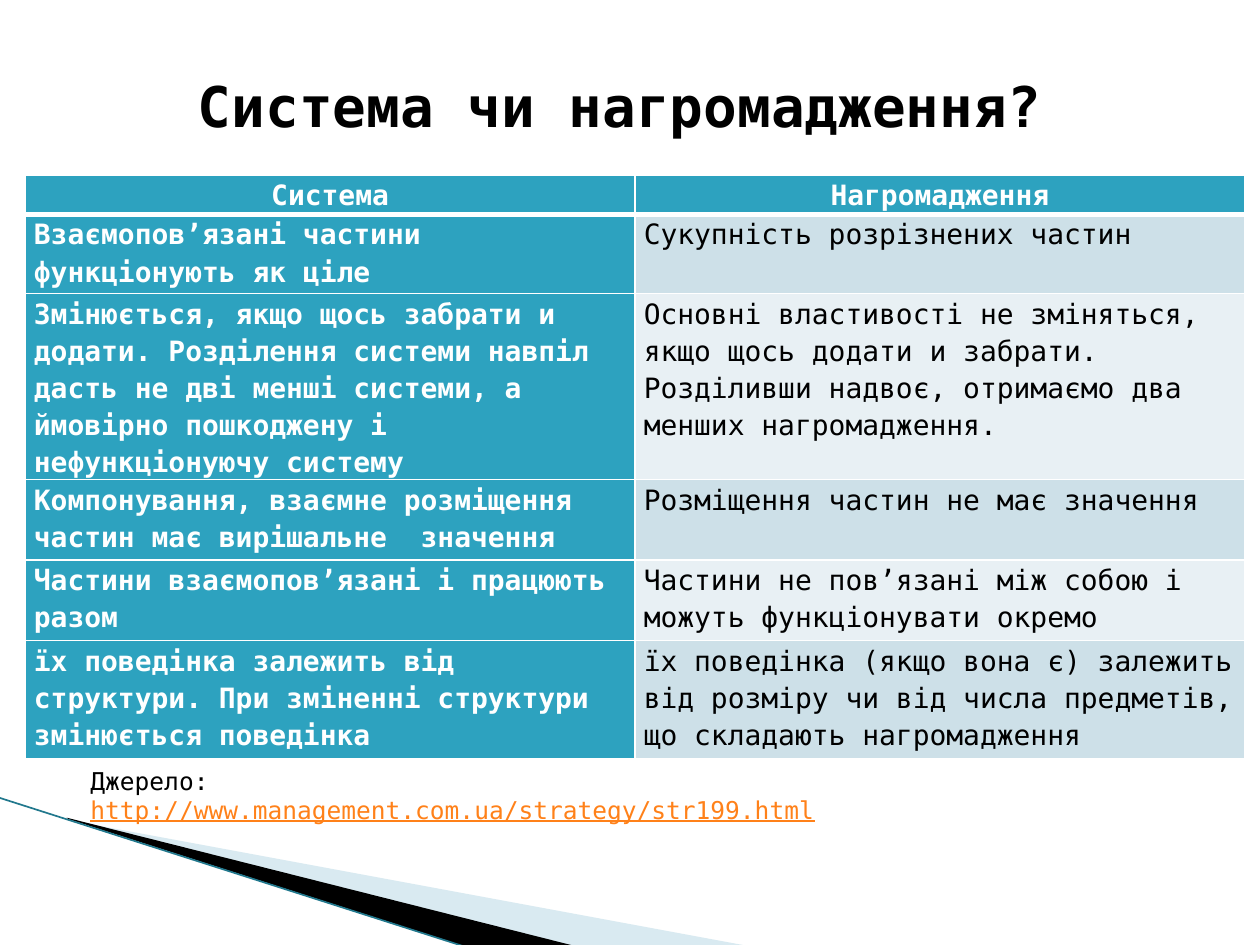
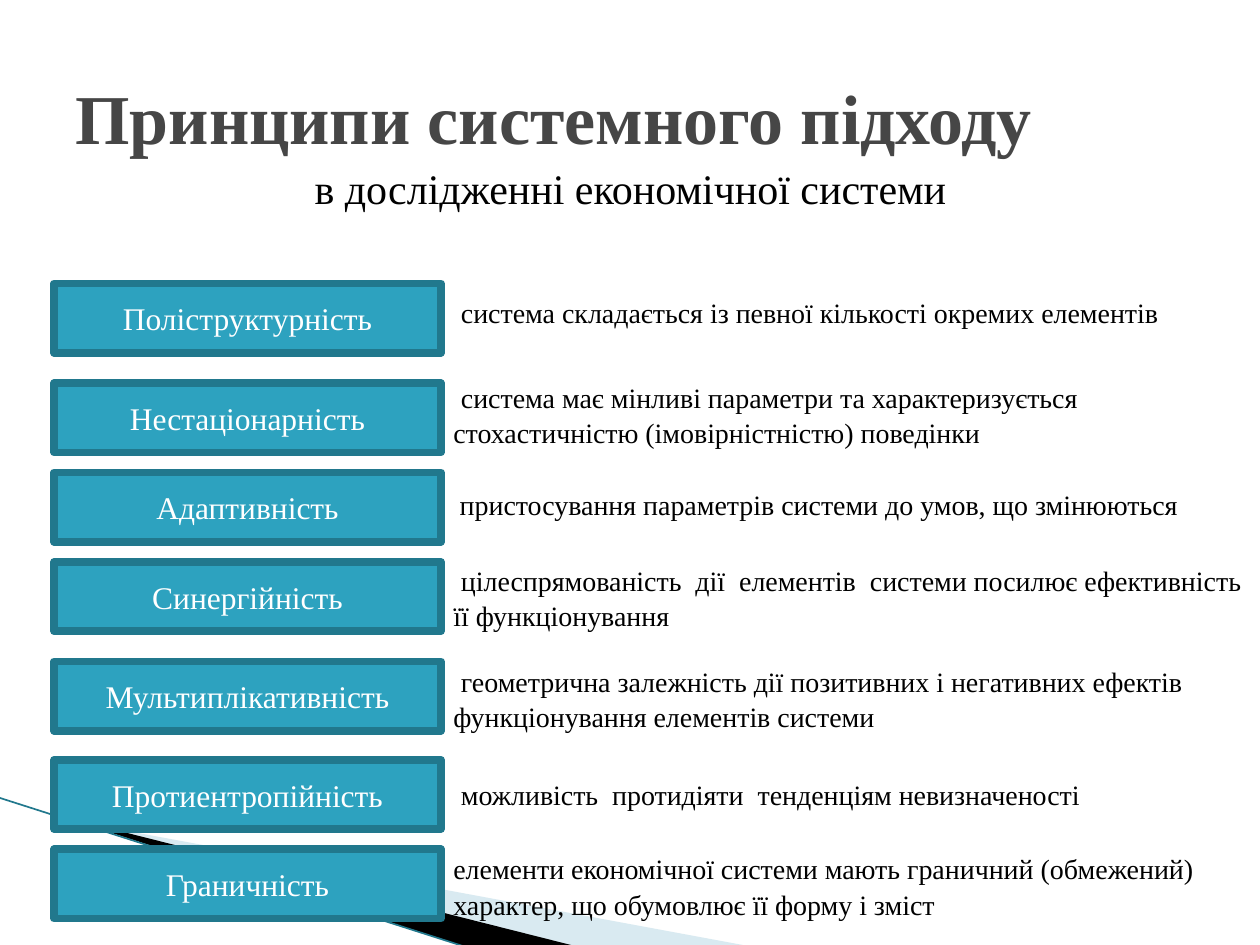
from dataclasses import dataclass

from lxml import etree
from pptx import Presentation
from pptx import util as u
from pptx.dml.color import RGBColor
from pptx.enum import shapes, text
from pptx.oxml.ns import qn

PX = 9144  # EMU in one px, 100 px to the inch
TITLE_ONLY = 5


@dataclass(frozen=True)
class Theme:
    mono: str = "DejaVu Sans Mono"
    serif: str = "Times New Roman"
    ink: str = "000000"
    heading: str = "464646"
    paper: str = "FFFFFF"
    accent: str = "2DA2BF"
    accent_dark: str = "21788D"
    wedge: str = "A0CBDC"
    link: str = "FF8119"
    bands: tuple = ("CDE0E8", "E8F0F4")
    mono_title: int = 32
    serif_title: int = 40
    subtitle: int = 24
    label: int = 18
    body: int = 16
    source: int = 14


THEME = Theme()
LEFT, CENTER = text.PP_ALIGN.LEFT, text.PP_ALIGN.CENTER

COMPARISON = [
    ("Система", "Нагромадження"),
    ("Взаємопов’язані частини функціонують як ціле",
     "Сукупність розрізнених частин"),
    ("Змінюється, якщо щось забрати и додати. Розділення системи навпіл дасть "
     "не дві менші системи, а ймовірно пошкоджену і нефункціонуючу систему",
     "Основні властивості не зміняться, якщо щось додати и забрати. "
     "Розділивши надвоє, отримаємо два менших нагромадження."),
    ("Компонування, взаємне розміщення частин має вирішальне  значення",
     "Розміщення частин не має значення"),
    ("Частини взаємопов’язані і працюють разом",
     "Частини не пов’язані між собою і можуть функціонувати окремо"),
    ("їх поведінка залежить від структури. При зміненні структури змінюється "
     "поведінка",
     "їх поведінка (якщо вона є) залежить від розміру чи від числа предметів, "
     "що складають нагромадження"),
]
ROW_HEIGHTS = [31, 63, 140, 64, 64, 94]

# label, top of its box, description, top and first-line indent of the description
PRINCIPLES = [
    ("Поліструктурність", 225,
     "система складається із певної кількості окремих елементів", 228, 6),
    ("Нестаціонарність", 304,
     "система має мінливі параметри та характеризується стохастичністю "
     "(імовірністністю) поведінки", 296, 6),
    ("Адаптивність", 375,
     "пристосування параметрів системи до умов, що змінюються", 381, 5),
    ("Синергійність", 446,
     "цілеспрямованість  дії  елементів  системи посилює ефективність її "
     "функціонування", 441, 6),
    ("Мультиплікативність", 525,
     "геометрична залежність дії позитивних і негативних ефектів "
     "функціонування елементів системи", 521, 6),
    ("Протиентропійність", 603,
     "можливість  протидіяти  тенденціям невизначеності", 611, 6),
    ("Граничність", 674,
     "елементи економічної системи мають граничний (обмежений) характер, що "
     "обумовлює її форму і зміст", 670, 0),
]


def px(*lengths):
    return [u.Emu(length * PX) for length in lengths]


def format_span(span, font, size, color, bold=False, underline=False):
    span.font.name = font
    span.font.size = u.Pt(size)
    span.font.color.rgb = RGBColor.from_string(color)
    span.font.bold = bold
    span.font.underline = underline


def paint(shape, color):
    shape.fill.solid()
    shape.fill.fore_color.rgb = RGBColor.from_string(color)


def add_border(cell, side, width, color):
    """Adds one edge; call in the order L, R, T, B and before the fill is set."""
    line = etree.SubElement(cell._tc.get_or_add_tcPr(), qn(f"a:ln{side}"),
                            w=str(u.Pt(width)))
    fill = etree.SubElement(line, qn("a:solidFill"))
    etree.SubElement(fill, qn("a:srgbClr"), val=color)


class SlideWriter:
    def __init__(self, deck, theme):
        self.deck = deck
        self.theme = theme
        self.page = None

    def start_page(self):
        self.page = self.deck.slides.add_slide(
            self.deck.slide_layouts[TITLE_ONLY])
        self.wedge([(55, 651), (595, 751), (456, 751), (55, 650)],
                   self.theme.wedge, opacity=40)
        self.wedge([(53, 649), (457, 751), (372, 752), (54, 650)],
                   self.theme.ink)
        self.edge_line((-1, 633), (371, 752))

    def wedge(self, points, color, opacity=100):
        builder = self.page.shapes.build_freeform(*points[0], scale=PX)
        builder.add_line_segments(points[1:], close=True)
        shape = builder.convert_to_shape()
        shape.shadow.inherit = False
        shape.line.fill.background()
        paint(shape, color)
        if opacity < 100:
            tint = shape._element.spPr.find(".//" + qn("a:srgbClr"))
            etree.SubElement(tint, qn("a:alpha"), val=str(opacity * 1000))

    def edge_line(self, start, end):
        line = self.page.shapes.add_connector(
            shapes.MSO_CONNECTOR.STRAIGHT, *px(*start, *end))
        line.line.width = u.Pt(0.95)
        line.line.color.rgb = RGBColor.from_string(self.theme.accent_dark)
        etree.SubElement(line._element.spPr, qn("a:effectLst"))

    def title(self, wording, place, font, size, color, align):
        title = self.page.shapes.title
        title.left, title.top, title.width, title.height = px(*place)
        frame = title.text_frame
        frame.text = wording
        frame.auto_size = text.MSO_AUTO_SIZE.NONE
        frame.vertical_anchor = text.MSO_ANCHOR.MIDDLE
        para = frame.paragraphs[0]
        para.alignment = align
        format_span(para.runs[0], font, size, color, bold=True)

    def text_box(self, wording, place, font, size, align=LEFT, spacing=1.0,
                 indent=0):
        """Adds a one-paragraph text box and returns the paragraph."""
        box = self.page.shapes.add_textbox(*px(*place))
        frame = box.text_frame
        frame.word_wrap = True
        frame.text = wording
        para = frame.paragraphs[0]
        para.alignment = align
        para.line_spacing = spacing
        if indent:
            para._p.get_or_add_pPr().set("indent", str(indent * PX))
        format_span(para.runs[0], font, size, self.theme.ink)
        return para

    def label_box(self, wording, place):
        theme = self.theme
        box = self.page.shapes.add_shape(
            shapes.MSO_SHAPE.RECTANGLE, *px(*place))
        box.shadow.inherit = False
        paint(box, theme.accent)
        box.line.color.rgb = RGBColor.from_string(theme.accent_dark)
        box.line.width = u.Pt(4.33)
        etree.SubElement(box.line._get_or_add_ln(), qn("a:round"))
        frame = box.text_frame
        frame.text = wording
        frame.vertical_anchor = text.MSO_ANCHOR.MIDDLE
        para = frame.paragraphs[0]
        para.alignment = CENTER
        format_span(para.runs[0], theme.serif, theme.label, theme.paper)

    def table(self, rows, left, top, column_width, heights):
        columns = len(rows[0])
        table = self.page.shapes.add_table(
            len(rows), columns,
            *px(left, top, columns * column_width, sum(heights))).table
        for column in table.columns:
            column.width = px(column_width)[0]
        for row_index, (wordings, height) in enumerate(zip(rows, heights)):
            table.rows[row_index].height = px(height)[0]
            for column_index, wording in enumerate(wordings):
                self.cell(table.cell(row_index, column_index), wording,
                          row_index, column_index)

    def cell(self, cell, wording, row, column):
        theme = self.theme
        accented = row == 0 or column == 0
        edges = {"L": 1, "R": 1, "T": 3 if row == 1 else 1,
                 "B": 3 if row == 0 else 1}
        for side, width in edges.items():
            add_border(cell, side, width, theme.paper)
        paint(cell, theme.accent if accented else theme.bands[(row - 1) % 2])
        cell.margin_left, cell.margin_right = px(7, 7)
        cell.margin_top = cell.margin_bottom = 0
        cell.text = wording
        para = cell.text_frame.paragraphs[0]
        para.alignment = CENTER if row == 0 else LEFT
        para.line_spacing = 1.15
        format_span(para.runs[0], theme.mono, theme.body,
                    theme.paper if accented else theme.ink, bold=accented)


def build_comparison(writer):
    theme = writer.theme
    writer.start_page()
    writer.title("Система чи нагромадження?", (67, 44, 850, 79),
                 theme.mono, theme.mono_title, theme.ink, CENTER)
    writer.table(COMPARISON, 20, 139, 484, ROW_HEIGHTS)
    para = writer.text_box("Джерело: ", (62, 603, 650, 34),
                           theme.mono, theme.source)
    address = para.add_run()
    address.text = "http://www.management.com.ua/strategy/str199.html"
    format_span(address, theme.mono, theme.source, theme.link, underline=True)


def build_principles(writer):
    theme = writer.theme
    writer.start_page()
    writer.title("Принципи системного підходу", (50, 30, 900, 125),
                 theme.serif, theme.serif_title, theme.heading, LEFT)
    writer.text_box("в дослідженні економічної системи", (91, 122, 819, 50),
                    theme.serif, theme.subtitle, CENTER, spacing=1.05)
    for label, label_top, description, top, indent in PRINCIPLES:
        writer.label_box(label, (43, label_top, 307, 55))
        writer.text_box(description, (350, top, 655, 64), theme.serif,
                        theme.body, spacing=1.05, indent=indent)


def main():
    deck = Presentation()
    deck.slide_width, deck.slide_height = px(1000, 750)
    writer = SlideWriter(deck, THEME)
    build_comparison(writer)
    build_principles(writer)
    deck.save("out.pptx")


if __name__ == "__main__":
    main()
